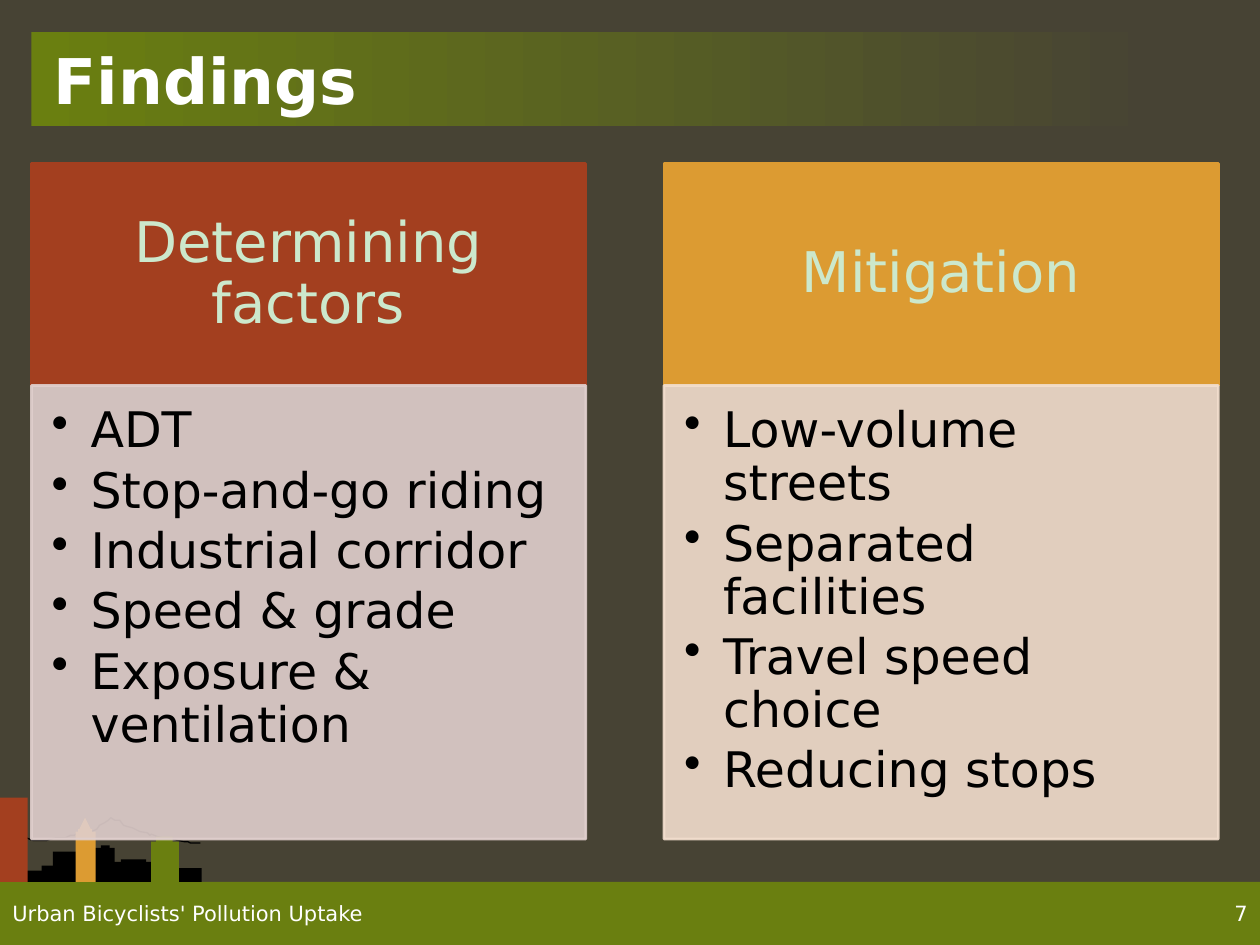
from lxml import etree
from pptx import Presentation
from pptx.dml.color import RGBColor
from pptx.enum.shapes import MSO_SHAPE
from pptx.enum.text import MSO_ANCHOR, PP_ALIGN
from pptx.oxml.ns import qn
from pptx.util import Pt

PX = 9144  # 100 px to the inch
RECTANGLE, TRIANGLE = MSO_SHAPE.RECTANGLE, MSO_SHAPE.ISOSCELES_TRIANGLE
TOP, MIDDLE = MSO_ANCHOR.TOP, MSO_ANCHOR.MIDDLE
LEFT, CENTER, RIGHT = PP_ALIGN.LEFT, PP_ALIGN.CENTER, PP_ALIGN.RIGHT

BACKGROUND, GREEN, RUST, GOLD = "474334", "6A7F10", "A33F1F", "DC9B32"
BLACK, WHITE, MINT = "000000", "FFFFFF", "CCE8CC"

CARDS = [
    ("Determining factors", RUST, "E0CFCD",
     ["ADT", "Stop-and-go riding", "Industrial corridor", "Speed & grade",
      "Exposure & ventilation"]),
    ("Mitigation", GOLD, "F2DECE",
     ["Low-volume streets", "Separated facilities", "Travel speed choice",
      "Reducing stops"]),
]
CARD_LEFT, CARD_PITCH, CARD_WIDTH = 25, 502, 440
HEADER_TOP, HEADER_HEIGHT, BODY_HEIGHT = 130, 176, 360

BUILDINGS_BACK = [(42, 676, 27, 24), (20, 691, 27, 9), (33, 687, 27, 13)]
BUILDINGS_FRONT = [(64, 673, 27, 27), (56, 685, 27, 15), (80, 671, 7, 28),
                   (84, 684, 42, 16), (96, 682, 20, 18), (140, 689, 20, 11)]
TOWERS = [(0, 633, 22, 67, RUST), (60, 660, 16, 40, GOLD), (62, 658, 11, 13, GOLD),
          (120, 668, 22, 32, GREEN), (124, 664, 13, 36, GREEN)]
RIDGE = [(0, 667), (10, 666), (15, 666), (21, 665), (26, 667), (37, 667), (44, 665),
         (52, 665), (56, 663), (59, 663), (63, 660), (65, 659), (67, 660), (70, 662),
         (73, 660), (77, 658), (79, 655), (83, 653), (86, 651), (88, 649), (91, 651),
         (95, 651), (98, 655), (101, 656), (105, 657), (111, 660), (117, 661),
         (119, 663), (120, 662), (125, 664), (129, 665), (132, 666), (137, 666),
         (141, 667), (146, 668), (149, 668), (151, 669), (159, 669)]


def rgb(color):
    return RGBColor.from_string(color)


def set_alpha(properties, percent):
    """Make the fill and line colours of a shape partly transparent."""
    for color in properties.iter(qn("a:srgbClr")):
        etree.SubElement(color, qn("a:alpha"), val=str(percent * 1000))


class SlideBuilder:
    font = "DejaVu Sans"

    def __init__(self, slide):
        self.slide = slide
        slide.background.fill.solid()
        slide.background.fill.fore_color.rgb = rgb(BACKGROUND)

    def shape(self, left, top, width, height, fill, kind=RECTANGLE, outlined=False):
        box = self.slide.shapes.add_shape(
            kind, left * PX, top * PX, width * PX, height * PX)
        box.shadow.inherit = False
        box.fill.solid()
        box.fill.fore_color.rgb = rgb(fill)
        if outlined:
            box.line.color.rgb = rgb(fill)
            box.line.width = Pt(1.5)
        else:
            box.line.fill.background()
        return box

    def gradient_bar(self, left, top, width, height, colors):
        bar = self.shape(left, top, width, height, colors[0])
        bar.fill.gradient()
        bar.fill.gradient_angle = 0
        for stop, color in zip(bar.fill.gradient_stops, colors):
            stop.color.rgb = rgb(color)

    def outline(self, points, color, width):
        builder = self.slide.shapes.build_freeform(*points[0], scale=PX)
        builder.add_line_segments(points[1:], close=False)
        line = builder.convert_to_shape()
        line.shadow.inherit = False
        line.fill.background()
        line.line.color.rgb = rgb(color)
        line.line.width = Pt(width)

    def frame(self, box, anchor, insets=(10, 5, 10, 5)):
        frame = box.text_frame
        frame.word_wrap = True
        frame.vertical_anchor = anchor
        (frame.margin_left, frame.margin_top,
         frame.margin_right, frame.margin_bottom) = [inset * PX for inset in insets]
        return frame

    def add_text(self, para, text, size, color, align=LEFT, bold=False):
        para.alignment = align
        span = para.add_run()
        span.text = text
        span.font.name = self.font
        span.font.size = Pt(size)
        span.font.bold = bold
        span.font.color.rgb = rgb(color)

    def label(self, left, top, width, height, text, size, align=LEFT, bold=False):
        box = self.slide.shapes.add_textbox(
            left * PX, top * PX, width * PX, height * PX)
        para = self.frame(box, MIDDLE).paragraphs[0]
        self.add_text(para, text, size, WHITE, align, bold)

    def bullets(self, frame, items, size):
        for index, item in enumerate(items):
            para = frame.paragraphs[0] if index == 0 else frame.add_paragraph()
            para.level = 1
            properties = para._p.get_or_add_pPr()
            properties.set("marL", str(31 * PX))
            properties.set("indent", str(-31 * PX))
            etree.SubElement(properties, qn("a:buChar"), char="•")
            para.line_spacing = 0.9
            para.space_after = Pt(size * 0.15)
            self.add_text(para, item, size, BLACK)

    def card(self, left, heading, color, tint, items):
        header = self.shape(left, HEADER_TOP, CARD_WIDTH, HEADER_HEIGHT, color,
                            outlined=True)
        para = self.frame(header, MIDDLE, (25, 14, 25, 14)).paragraphs[0]
        para.line_spacing = 0.9
        self.add_text(para, heading, 32, MINT, CENTER)
        body = self.shape(left, HEADER_TOP + HEADER_HEIGHT, CARD_WIDTH, BODY_HEIGHT,
                          tint, outlined=True)
        set_alpha(body._element.spPr, 90)
        self.bullets(self.frame(body, TOP, (16, 16, 22, 24)), items, 28)

    def skyline(self):
        for building in BUILDINGS_BACK:
            self.shape(*building, BLACK)
        self.outline(RIDGE, BLACK, 0.75)
        self.shape(62, 649, 11, 11, GOLD, TRIANGLE)
        for building in BUILDINGS_FRONT:
            self.shape(*building, BLACK)
        for tower in TOWERS:
            self.shape(*tower)


def main():
    deck = Presentation()
    deck.slide_width, deck.slide_height = 1000 * PX, 750 * PX
    page = SlideBuilder(deck.slides.add_slide(deck.slide_layouts[6]))

    page.shape(0, 700, 1000, 50, GREEN)
    page.gradient_bar(25, 25, 900, 75, (GREEN, BACKGROUND))
    page.skyline()
    page.label(33, 17, 933, 92, "Findings", 36, bold=True)
    for index, card in enumerate(CARDS):
        page.card(CARD_LEFT + index * CARD_PITCH, *card)
    page.label(933, 700, 67, 50, "7", 12, RIGHT)
    page.label(0, 700, 417, 50, "Urban Bicyclists' Pollution Uptake", 12)

    deck.save("out.pptx")


if __name__ == "__main__":
    main()
